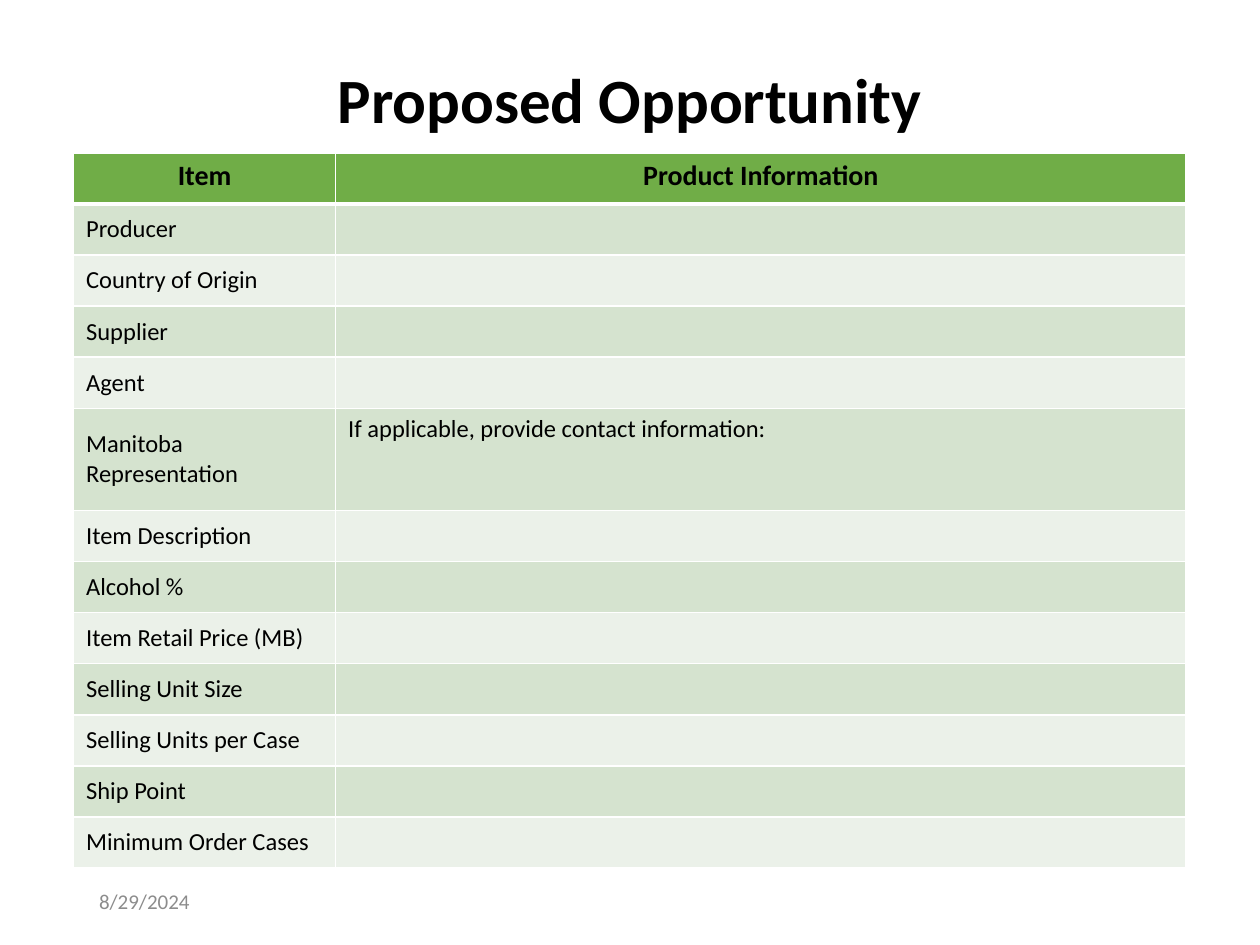
import pptx
import pptx.dml.color
import pptx.enum.text
import pptx.oxml
import pptx.oxml.ns
import pptx.util
from dataclasses import dataclass

Pt = pptx.util.Pt
ALIGN = pptx.enum.text.PP_ALIGN
ANCHOR = pptx.enum.text.MSO_ANCHOR


@dataclass(frozen=True)
class Theme:
    font: str = "Calibri"
    text: str = "000000"
    muted: str = "8C8C8C"
    header: str = "70AD47"
    bands: tuple = ("D5E3CF", "EBF1E9")
    border: str = "FFFFFF"
    title_size: int = 36
    header_size: int = 16
    body_size: int = 14
    date_size: int = 12


THEME = Theme()
ROW_HEIGHT = 29.2
COLUMN_WIDTHS = (149.8, 486)
HEADINGS = ("Item", "Product Information")
REPRESENTATION = "Manitoba Representation\u00a0"
ITEMS = (
    "Producer", "Country of Origin", "Supplier", "Agent", REPRESENTATION,
    "Item Description", "Alcohol %", "Item Retail Price (MB)",
    "Selling Unit Size", "Selling Units per Case", "Ship Point",
    "Minimum Order Cases",
)
DETAILS = {REPRESENTATION: "If applicable, provide contact information:"}


def color(value):
    return pptx.dml.color.RGBColor.from_string(value)


def write_text(frame, text, size, text_color=THEME.text, bold=False, align=ALIGN.LEFT):
    frame.word_wrap = True
    paragraph = frame.paragraphs[0]
    paragraph.text = text
    paragraph.alignment = align
    font = paragraph.font
    font.name, font.size, font.bold = THEME.font, Pt(size), bold
    font.color.rgb = color(text_color)
    return paragraph


def set_borders(cell, bottom=1):
    properties = cell._tc.get_or_add_tcPr()
    widths = {"lnL": 1, "lnR": 1, "lnT": 1, "lnB": bottom}
    for index, (side, width) in enumerate(widths.items()):
        line = pptx.oxml.parse_xml(
            f'<a:{side} {pptx.oxml.ns.nsdecls("a")} w="{Pt(width)}">'
            f'<a:solidFill><a:srgbClr val="{THEME.border}"/></a:solidFill></a:{side}>'
        )
        properties.insert(index, line)


def format_cell(cell, text, fill, size=THEME.body_size, bold=False,
                align=ALIGN.LEFT, anchor=ANCHOR.MIDDLE, bottom=1):
    write_text(cell.text_frame, text, size, bold=bold, align=align)
    cell.vertical_anchor = anchor
    cell.fill.solid()
    cell.fill.fore_color.rgb = color(fill)
    set_borders(cell, bottom)


def add_title(slide, text):
    title = slide.shapes.title
    title.left, title.top, title.width, title.height = Pt(49.5), Pt(28.8), Pt(621), Pt(60.5)
    title.text_frame.vertical_anchor = ANCHOR.MIDDLE
    paragraph = write_text(title.text_frame, text, THEME.title_size,
                           bold=True, align=ALIGN.CENTER)
    paragraph.line_spacing = 0.9


def add_product_table(slide):
    row_count = len(ITEMS) + 1
    frame = slide.shapes.add_table(row_count, len(HEADINGS), Pt(42), Pt(87.3),
                                   Pt(sum(COLUMN_WIDTHS)), Pt(ROW_HEIGHT * row_count))
    table = frame.table
    for column, width in zip(table.columns, COLUMN_WIDTHS):
        column.width = Pt(width)
    for row in table.rows:
        row.height = Pt(ROW_HEIGHT)

    # Header row
    for cell, heading in zip(table.rows[0].cells, HEADINGS):
        format_cell(cell, heading, THEME.header, THEME.header_size, bold=True,
                    align=ALIGN.CENTER, anchor=ANCHOR.TOP, bottom=3)

    # Banded item rows; a row with details is twice as tall
    for index, item in enumerate(ITEMS):
        row = table.rows[index + 1]
        fill = THEME.bands[index % 2]
        if item in DETAILS:
            row.height = Pt(2 * ROW_HEIGHT)
        format_cell(row.cells[0], item, fill)
        format_cell(row.cells[1], DETAILS.get(item, ""), fill, anchor=ANCHOR.TOP)


def add_date(slide, text):
    box = slide.shapes.add_textbox(Pt(49.5), Pt(500.5), Pt(162), Pt(28.8))
    box.text_frame.vertical_anchor = ANCHOR.MIDDLE
    write_text(box.text_frame, text, THEME.date_size, THEME.muted)


def main():
    presentation = pptx.Presentation()
    presentation.slide_width, presentation.slide_height = Pt(720), Pt(540)
    slide = presentation.slides.add_slide(presentation.slide_layouts[5])
    add_title(slide, "Proposed Opportunity")
    add_date(slide, "8/29/2024")
    add_product_table(slide)
    presentation.save("out.pptx")


if __name__ == "__main__":
    main()
